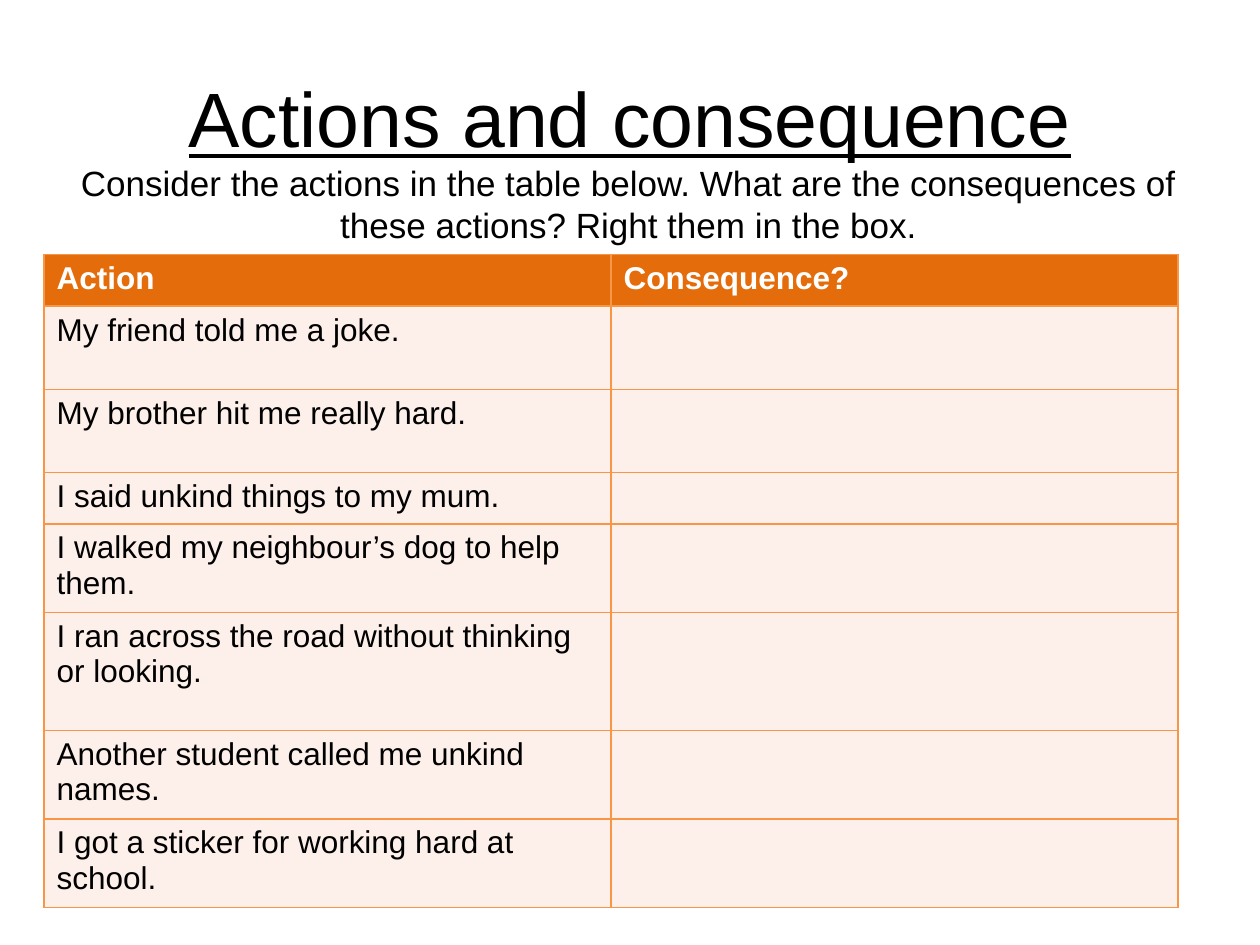
from pptx import Presentation
from pptx.dml.color import RGBColor
from pptx.enum.text import MSO_ANCHOR, PP_ALIGN
from pptx.oxml import parse_xml
from pptx.oxml.ns import nsdecls
from pptx.util import Inches, Pt

COLORS = {
    "text": "000000",
    "header_text": "FFFFFF",
    "header_fill": "E46C0A",
    "row_fill": "FDEFE9",
    "border": "F79646",
}
FONT = "Arial"
COLUMN_WIDTH = 4.5
ROW_HEIGHTS = {1: 0.41, 2: 0.66, 3: 0.94}
ROWS = [
    ("Action", "Consequence?", 1),
    ("My friend told me a joke.", "", 2),
    ("My brother hit me really hard.", "", 2),
    ("I said unkind things to my mum.", "", 1),
    ("I walked my neighbour’s dog to help them.", "", 2),
    ("I ran across the road without thinking or looking.", "", 3),
    ("Another student called me unkind names.", "", 2),
    ("I got a sticker for working hard at school.", "", 2),
]


def set_font(paragraph, size, color="text", bold=False, underline=False):
    font = paragraph.font
    font.name = FONT
    font.size = Pt(size)
    font.bold = bold
    font.underline = underline
    font.color.rgb = RGBColor.from_string(COLORS[color])


def add_text(page, text, place, size, anchor=MSO_ANCHOR.TOP, underline=False):
    box = page.shapes.add_textbox(*map(Inches, place))
    frame = box.text_frame
    frame.word_wrap = True
    frame.vertical_anchor = anchor
    paragraph = frame.paragraphs[0]
    paragraph.text = text
    paragraph.alignment = PP_ALIGN.CENTER
    set_font(paragraph, size, underline=underline)


def add_borders(cell):
    properties = cell._tc.get_or_add_tcPr()
    for position, side in enumerate(("lnL", "lnR", "lnT", "lnB")):
        line = parse_xml(
            f'<a:{side} {nsdecls("a")} w="{Pt(1)}"><a:solidFill>'
            f'<a:srgbClr val="{COLORS["border"]}"/></a:solidFill></a:{side}>'
        )
        properties.insert(position, line)


def fill_cell(cell, text, is_header):
    cell.fill.solid()
    fill = COLORS["header_fill" if is_header else "row_fill"]
    cell.fill.fore_color.rgb = RGBColor.from_string(fill)
    add_borders(cell)
    paragraph = cell.text_frame.paragraphs[0]
    paragraph.text = text
    set_font(paragraph, 18, "header_text" if is_header else "text", bold=is_header)


def add_action_table(page, left, top):
    heights = [ROW_HEIGHTS[lines] for *_, lines in ROWS]
    place = (left, top, 2 * COLUMN_WIDTH, sum(heights))
    table = page.shapes.add_table(len(ROWS), 2, *map(Inches, place)).table
    for index, (action, consequence, _) in enumerate(ROWS):
        table.rows[index].height = Inches(heights[index])
        for column, text in enumerate((action, consequence)):
            fill_cell(table.cell(index, column), text, index == 0)


def main():
    deck = Presentation()
    deck.slide_width, deck.slide_height = Inches(10), Inches(7.5)
    page = deck.slides.add_slide(deck.slide_layouts[6])
    add_text(page, "Actions and consequence", (0.5, 0.3, 9, 1.25), 44,
             MSO_ANCHOR.MIDDLE, underline=True)
    add_text(page, "Consider the actions in the table below. What are the "
             "consequences of these actions? Right them in the box.",
             (0.49, 1.23, 9, 4.95), 20)
    add_action_table(page, 0.35, 2.02)
    deck.save("out.pptx")


if __name__ == "__main__":
    main()
